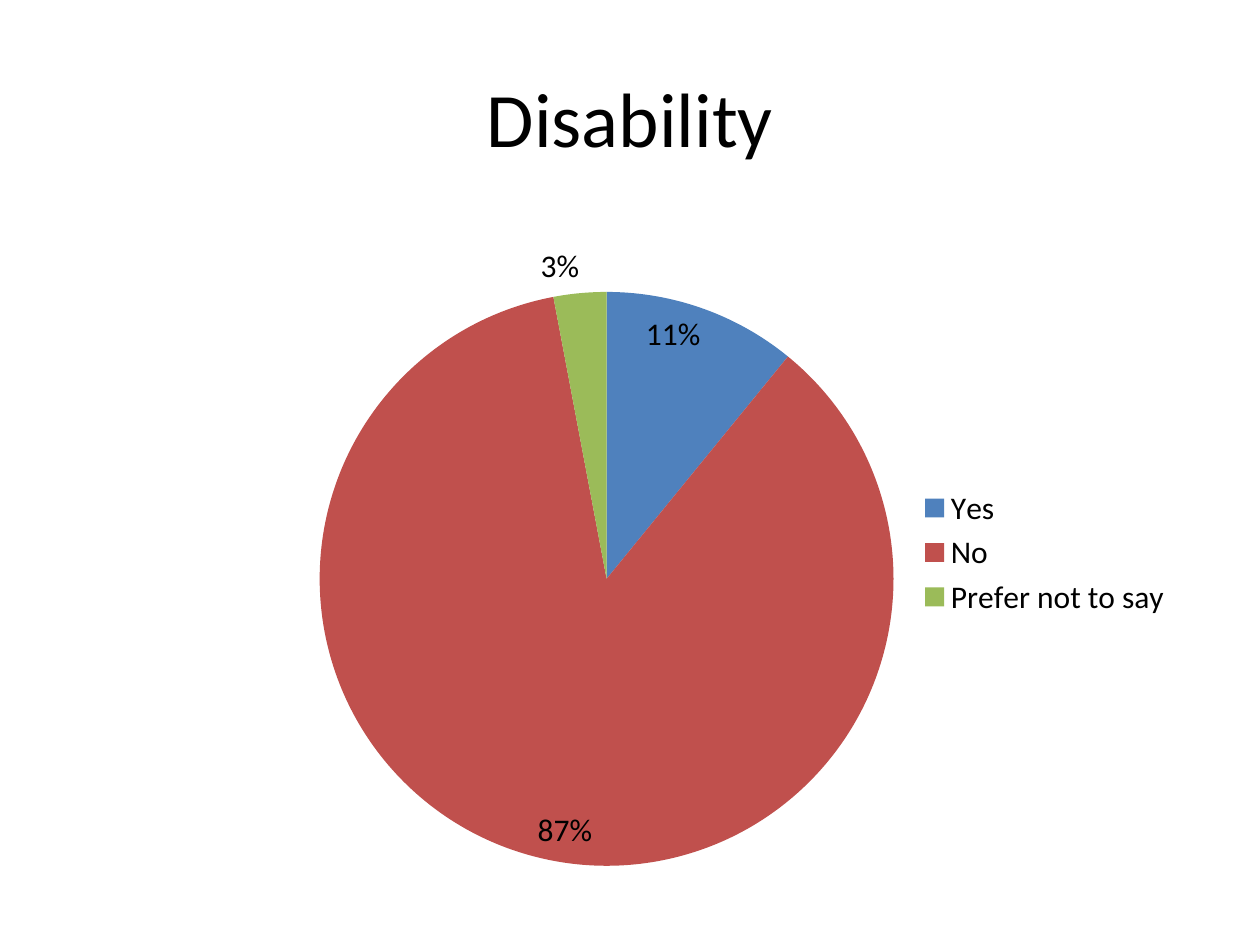
import pptx
import pptx.chart.data
import pptx.dml.color
import pptx.enum.chart
import pptx.enum.text
import pptx.util
import lxml.etree

PX = pptx.util.Inches(1) // 126


def color(value):
    return pptx.dml.color.RGBColor.from_string(value)


presentation = pptx.Presentation()
presentation.slide_width = 1260 * PX
presentation.slide_height = 945 * PX
slide = presentation.slides.add_slide(presentation.slide_layouts[6])

title = slide.shapes.add_textbox(63 * PX, 38 * PX, 1134 * PX, 158 * PX)
title.text_frame.word_wrap = True
title.text_frame.vertical_anchor = pptx.enum.text.MSO_ANCHOR.MIDDLE
paragraph = title.text_frame.paragraphs[0]
paragraph.text = "Disability"
paragraph.alignment = pptx.enum.text.PP_ALIGN.CENTER
paragraph.font.name = "Calibri"
paragraph.font.size = pptx.util.Pt(44)
paragraph.font.color.rgb = color("000000")

Position = pptx.enum.chart.XL_LABEL_POSITION
slices = [
    ("Yes", 11, "4F81BD", Position.INSIDE_END),
    ("No", 87, "C0504D", Position.INSIDE_END),
    ("Prefer not to say", 3, "9BBB59", Position.OUTSIDE_END),
]
chart_data = pptx.chart.data.CategoryChartData(number_format='0"%"')
chart_data.categories = [name for name, *_ in slices]
chart_data.add_series("Series 1", [value for _, value, *_ in slices])
chart = slide.shapes.add_chart(
    pptx.enum.chart.XL_CHART_TYPE.PIE,
    302 * PX, 175 * PX, 883 * PX, 755 * PX, chart_data,
).chart
chart.has_title = False
chart.font.name = "Calibri"
chart.font.size = pptx.util.Pt(18)
chart.font.color.rgb = color("000000")
chart.has_legend = True
chart.legend.position = pptx.enum.chart.XL_LEGEND_POSITION.RIGHT
chart.legend.include_in_layout = False

plot = chart.plots[0]
plot.vary_by_categories = True
plot.has_data_labels = True
plot.data_labels.show_value = True
for index, (_, _, fill, position) in enumerate(slices):
    point = plot.series[0].points[index]
    point.format.fill.solid()
    point.format.fill.fore_color.rgb = color(fill)
    point.data_label.position = position

namespace = "{http://schemas.openxmlformats.org/drawingml/2006/chart}"
plot_area = chart.element.find(f".//{namespace}plotArea")
for old_layout in plot_area.findall(f"{namespace}layout"):
    plot_area.remove(old_layout)
layout = lxml.etree.Element(f"{namespace}layout")
plot_area.insert(0, layout)
manual = lxml.etree.SubElement(layout, f"{namespace}manualLayout")
settings = {
    "layoutTarget": "inner", "xMode": "edge", "yMode": "edge",
    "x": round(18 / 883, 2), "y": round(111 / 755, 2),
    "w": round(578 / 883, 2), "h": round(578 / 755, 2),
}
for name, value in settings.items():
    lxml.etree.SubElement(manual, f"{namespace}{name}", val=str(value))

presentation.save("out.pptx")
